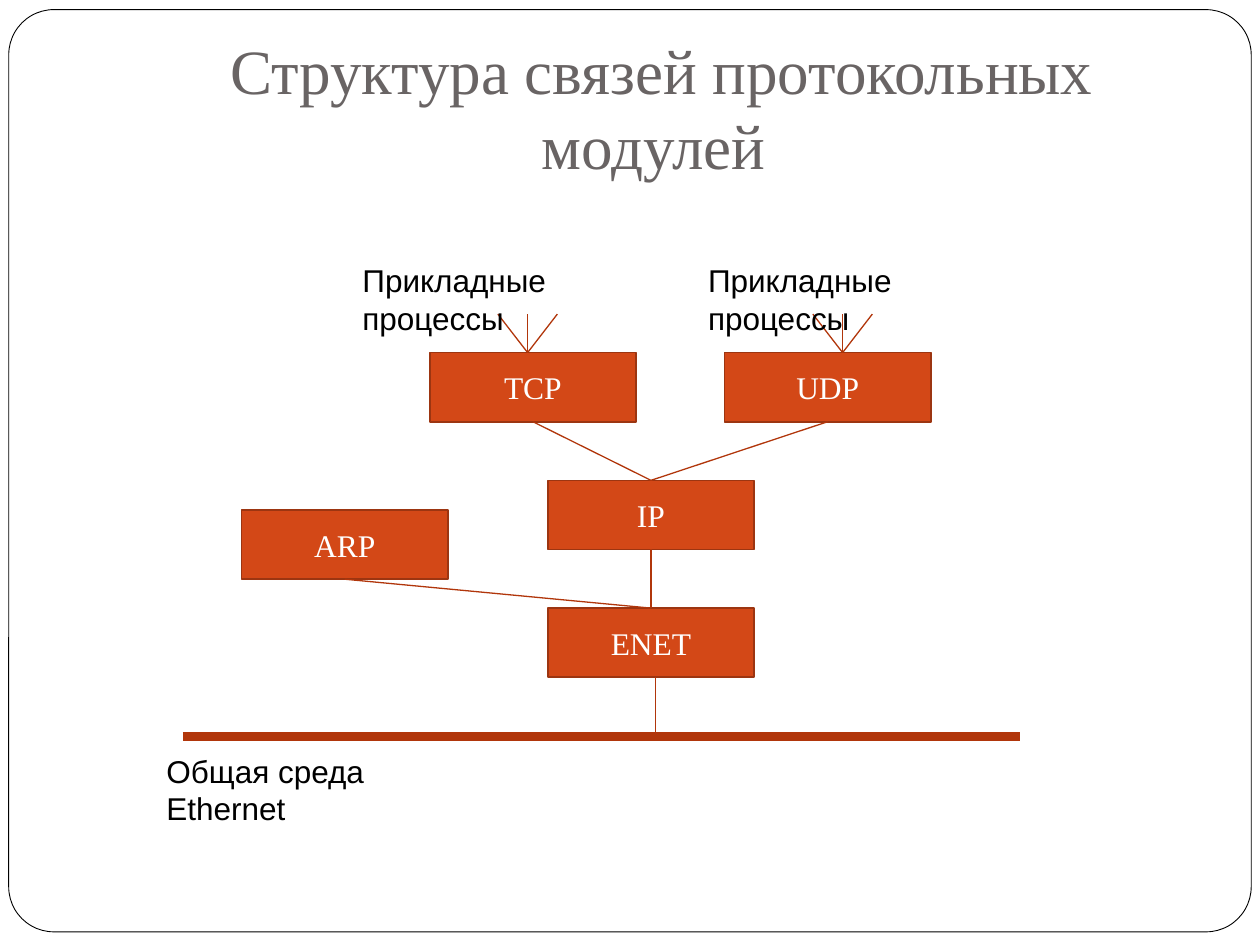
from dataclasses import dataclass

import pptx
import pptx.dml.color
import pptx.enum.shapes
import pptx.enum.text
import pptx.oxml
import pptx.oxml.ns
import pptx.util
from pptx.util import Pt

Shapes = pptx.enum.shapes.MSO_SHAPE
Anchor = pptx.enum.text.MSO_ANCHOR
Align = pptx.enum.text.PP_ALIGN
TOP, BOTTOM = 0, 2


@dataclass(frozen=True)
class Theme:
    paper: str = "FFFFFF"
    ink: str = "000000"
    title: str = "696464"
    module: str = "D34817"
    module_edge: str = "9C3511"
    link: str = "B1360B"
    serif: str = "Times New Roman"
    sans: str = "Arial"
    title_size: float = 36
    body_size: float = 18
    hairline: float = 0.5
    thin: float = 0.75
    edge: float = 1
    bus: float = 5.25


THEME = Theme()


@dataclass(frozen=True)
class Box:
    left: float
    top: float
    width: float
    height: float

    def inner(self, left, top, width, height):
        return Box(self.left + left, self.top + top, width, height)

    def lengths(self):
        return Pt(self.left), Pt(self.top), Pt(self.width), Pt(self.height)


def color(value):
    return pptx.dml.color.RGBColor.from_string(value)


def write(shape, text, font, size, ink, align, anchor):
    frame = shape.text_frame
    frame.word_wrap = True
    frame.vertical_anchor = anchor
    para = frame.paragraphs[0]
    para.alignment = align
    span = para.add_run()
    span.text = text
    span.font.name = font
    span.font.size = Pt(size)
    span.font.color.rgb = color(ink)
    return frame


def add_block(page, kind, box, fill, edge, weight):
    shape = page.shapes.add_shape(kind, *box.lengths())
    shape.shadow.inherit = False
    shape.fill.solid()
    shape.fill.fore_color.rgb = color(fill)
    shape.line.color.rgb = color(edge)
    shape.line.width = Pt(weight)
    return shape


def add_link(page, start=(0, 0), end=(0, 0), weight=THEME.thin):
    link = page.shapes.add_connector(
        pptx.enum.shapes.MSO_CONNECTOR.STRAIGHT, *map(Pt, (*start, *end)))
    link.line.color.rgb = color(THEME.link)
    link.line.width = Pt(weight)
    link._element.spPr.append(pptx.oxml.parse_xml(
        f"<a:effectLst {pptx.oxml.ns.nsdecls('a')}/>"))
    return link


def add_frame(page, box):
    frame = add_block(page, Shapes.ROUNDED_RECTANGLE, box,
                      THEME.paper, THEME.ink, THEME.hairline)
    frame.adjustments[0] = 0.049


def add_title(page, box):
    title = page.shapes.add_textbox(*box.lengths())
    frame = write(title, "Структура связей протокольных модулей ", THEME.serif,
                  THEME.title_size, THEME.title, Align.CENTER, Anchor.BOTTOM)
    frame.margin_bottom = Pt(7.2)


def add_caption(page, text, box):
    caption = page.shapes.add_textbox(*box.lengths())
    frame = write(caption, text, THEME.sans, THEME.body_size, THEME.ink,
                  Align.LEFT, Anchor.TOP)
    frame.margin_right = Pt(14)  # keeps the last word on a second line


def add_module(page, name, box):
    module = add_block(page, Shapes.RECTANGLE, box,
                       THEME.module, THEME.module_edge, THEME.edge)
    write(module, name, THEME.serif, THEME.body_size, THEME.paper,
          Align.CENTER, Anchor.MIDDLE)
    return module


def add_diagram(page, box):
    # Protocol modules
    places = {"TCP": (157.5, 56.5), "UDP": (326, 56.5), "IP": (225, 129.5),
              "ARP": (50, 146.5), "ENET": (225, 202.5)}
    modules = {name: add_module(page, name, box.inner(left, top, 118, 39.5))
               for name, (left, top) in places.items()}

    # Links from each module down to the next
    for upper, lower in (("TCP", "IP"), ("UDP", "IP"),
                         ("ARP", "ENET"), ("IP", "ENET")):
        link = add_link(page)
        link.begin_connect(modules[upper], BOTTOM)
        link.end_connect(modules[lower], TOP)

    # Fans of application processes above the transport modules
    for tip in (213.5, 393.5):
        for spread in (-17, 0, 17):
            add_link(page, (box.left + tip, box.top + 56.5),
                     (box.left + tip + spread, box.top + 34.5))
    for left in (309.5, 112):
        add_caption(page, "Прикладные процессы", box.inner(left, 0.5, 204, 29))

    # Shared Ethernet medium
    bus = box.top + 276
    add_link(page, (box.left + 16.5, bus), (box.left + 495, bus), THEME.bus)
    add_link(page, (box.left + 286.5, box.top + 242), (box.left + 286.5, bus))
    add_caption(page, "Общая среда Ethernet", box.inner(0, 281, 198.5, 29))


def main():
    deck = pptx.Presentation()
    deck.slide_width, deck.slide_height = Pt(720), Pt(540)
    page = deck.slides.add_slide(deck.slide_layouts[6])
    add_frame(page, Box(5, 5.5, 710, 527))
    add_title(page, Box(72, 21.5, 612, 90))
    add_diagram(page, Box(88, 145, 514, 310))
    deck.save("out.pptx")


if __name__ == "__main__":
    main()
